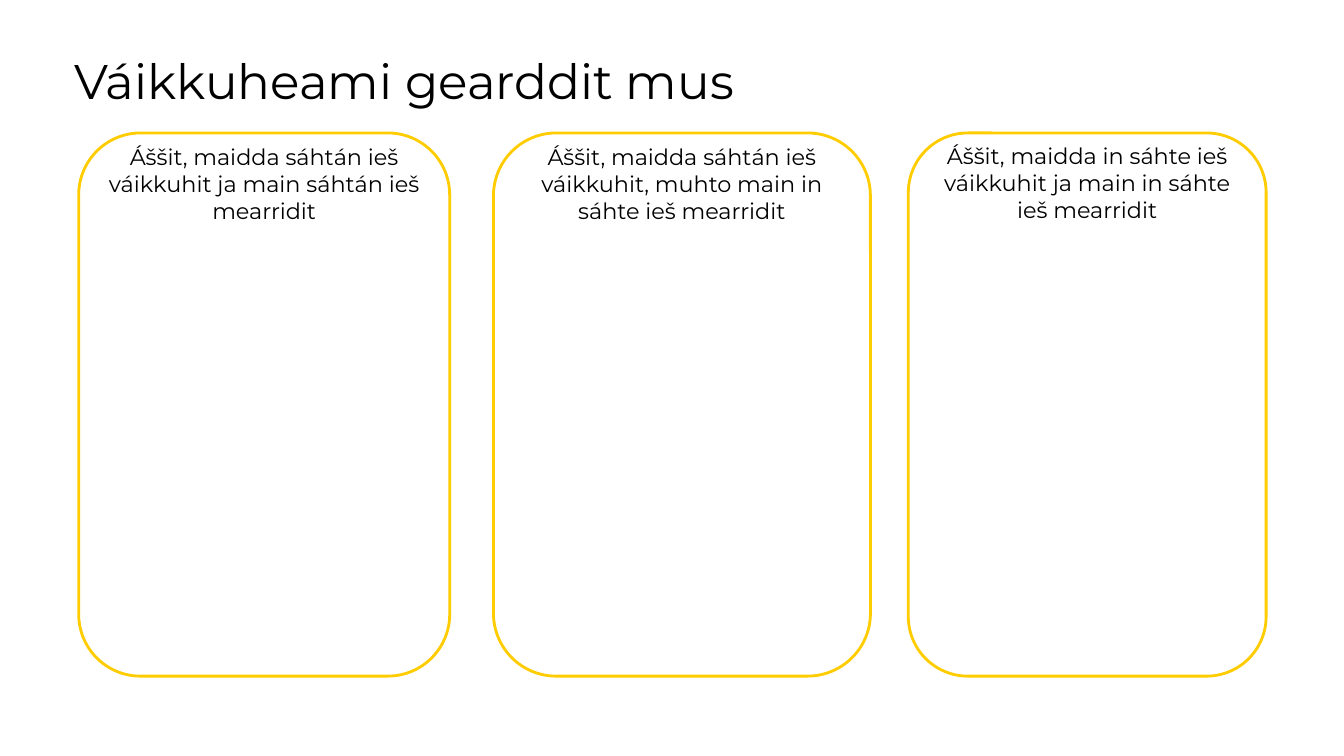
from pptx import Presentation
from pptx.dml.color import RGBColor
from pptx.enum import shapes, text
from pptx.util import Pt

BLACK = RGBColor(0x00, 0x00, 0x00)
WHITE = RGBColor(0xFF, 0xFF, 0xFF)
YELLOW = RGBColor(0xFF, 0xCC, 0x00)

COLUMN_LEFT, COLUMN_PITCH = 56.2, 296.3
COLUMN_TOP, COLUMN_HEIGHT = 95, 388
COLUMNS = [
    (265, "Áššit, maidda sáhtán ieš váikkuhit ja main sáhtán ieš mearridit"),
    (269.3, "Áššit, maidda sáhtán ieš váikkuhit, muhto main in sáhte ieš mearridit"),
    (255.6, "Áššit, maidda in sáhte ieš váikkuhit ja main in sáhte ieš mearridit"),
]


class SlideBuilder:
    font_name = "Montserrat"

    def __init__(self, slide):
        self.slide = slide

    def add_wording(self, frame, wording, size, align):
        frame.word_wrap = True
        paragraph = frame.paragraphs[0]
        paragraph.alignment = align
        run = paragraph.add_run()
        run.text = wording
        run.font.name = self.font_name
        run.font.size = Pt(size)
        run.font.color.rgb = BLACK

    def title(self, wording, left, top, width, height):
        heading = self.slide.shapes.title
        heading.left, heading.top = Pt(left), Pt(top)
        heading.width, heading.height = Pt(width), Pt(height)
        frame = heading.text_frame
        frame.auto_size = text.MSO_AUTO_SIZE.NONE
        frame.vertical_anchor = text.MSO_ANCHOR.MIDDLE
        frame.margin_left = frame.margin_right = Pt(7.2)
        frame.margin_top = frame.margin_bottom = Pt(7.2)
        self.add_wording(frame, wording, 34.7, text.PP_ALIGN.LEFT)

    def column(self, wording, left, top, width, height):
        card = self.slide.shapes.add_shape(
            shapes.MSO_SHAPE.ROUNDED_RECTANGLE,
            Pt(left), Pt(top), Pt(width), Pt(height))
        card.shadow.inherit = False
        card.fill.solid()
        card.fill.fore_color.rgb = WHITE
        card.line.color.rgb = YELLOW
        card.line.width = Pt(2)
        frame = card.text_frame
        frame.vertical_anchor = text.MSO_ANCHOR.TOP
        frame.margin_top = Pt(-5.7)
        self.add_wording(frame, wording, 16, text.PP_ALIGN.CENTER)


def main():
    deck = Presentation()
    deck.slide_width, deck.slide_height = Pt(960), Pt(540)
    builder = SlideBuilder(deck.slides.add_slide(deck.slide_layouts[5]))
    builder.title("Váikkuheami gearddit mus", 46, 20, 752, 74)
    for index, (width, wording) in enumerate(COLUMNS):
        left = COLUMN_LEFT + index * COLUMN_PITCH
        builder.column(wording, left, COLUMN_TOP, width, COLUMN_HEIGHT)
    deck.save("out.pptx")


if __name__ == "__main__":
    main()
